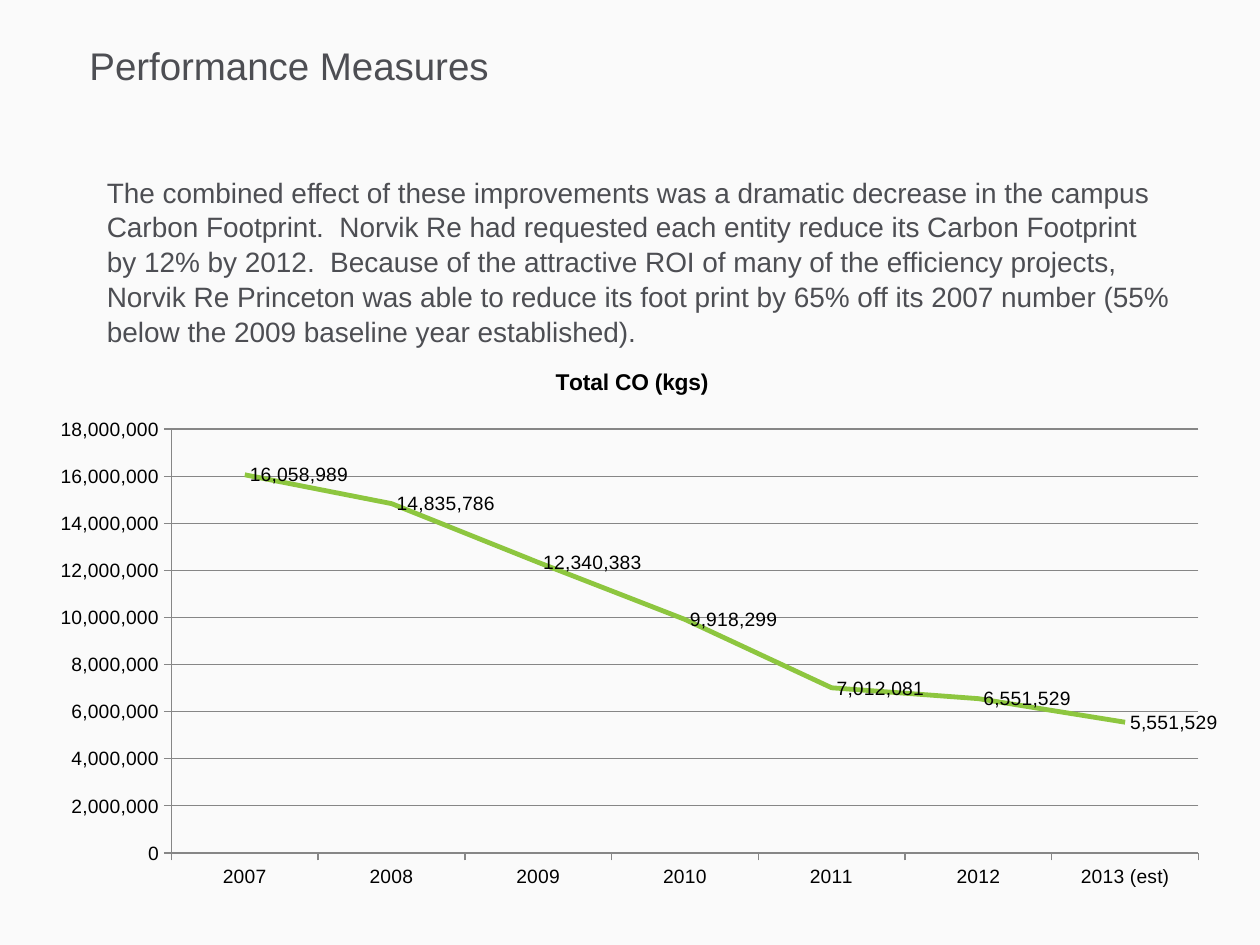
from lxml.etree import SubElement
from pptx import Presentation
from pptx.chart.data import CategoryChartData
from pptx.dml.color import RGBColor
from pptx.enum.chart import XL_CHART_TYPE, XL_LABEL_POSITION, XL_TICK_MARK
from pptx.enum.text import MSO_ANCHOR, MSO_AUTO_SIZE, PP_ALIGN
from pptx.oxml.ns import qn
from pptx.util import Inches, Pt

PAPER = RGBColor(0xFA, 0xFA, 0xFA)
GREY = RGBColor(0x4D, 0x4E, 0x53)
BLACK = RGBColor(0, 0, 0)
GREEN = RGBColor(0x8D, 0xC6, 0x3F)
RULE = RGBColor(0x86, 0x86, 0x86)
FACE = "Arial"
COMMAS = "#,##0"

STORY = (
    "The combined effect of these improvements was a dramatic decrease in the "
    "campus Carbon Footprint.  Norvik Re had requested each entity reduce its "
    "Carbon Footprint by 12% by 2012.  Because of the attractive ROI of many of "
    "the efficiency projects, Norvik Re Princeton was able to reduce its foot "
    "print by 65% off its 2007 number (55% below the 2009 baseline year "
    "established)."
)
CARBON = {
    "2007": 16058989,
    "2008": 14835786,
    "2009": 12340383,
    "2010": 9918299,
    "2011": 7012081,
    "2012": 6551529,
    "2013 (est)": 5551529,
}


class Page:
    """One slide; places are percent of its width and height."""

    def __init__(self, deck):
        self.deck = deck
        self.slide = deck.slides.add_slide(deck.slide_layouts[5])
        fill = self.slide.background.fill
        fill.solid()
        fill.fore_color.rgb = PAPER

    def place(self, left, top, width, height):
        wide, high = self.deck.slide_width, self.deck.slide_height
        return [int(share * side / 100) for share, side in
                zip((left, top, width, height), (wide, high, wide, high))]

    def style(self, font, size, color=BLACK, bold=False):
        font.name, font.size, font.bold = FACE, Pt(size), bold
        font.color.rgb = color

    def letter(self, frame, text, size):
        """Set the frame's text, top left, and return its paragraph."""
        frame.word_wrap = True
        frame.auto_size = MSO_AUTO_SIZE.NONE
        frame.vertical_anchor = MSO_ANCHOR.TOP
        frame.text = text
        para = frame.paragraphs[0]
        para.alignment = PP_ALIGN.LEFT
        self.style(para.font, size, GREY)
        return para

    def title(self, text, box):
        shape = self.slide.shapes.title
        shape.left, shape.top, shape.width, shape.height = self.place(*box)
        frame = shape.text_frame
        frame.margin_left = frame.margin_right = 0
        frame.margin_top = frame.margin_bottom = 0
        self.letter(frame, text, 22)

    def text(self, text, box):
        shape = self.slide.shapes.add_textbox(*self.place(*box))
        self.letter(shape.text_frame, text, 16).line_spacing = 1.04

    def rule(self, line):
        line.color.rgb = RULE
        line.width = Pt(0.75)

    def chart(self, name, values, box, inner):
        data = CategoryChartData(number_format=COMMAS)
        data.categories = list(values)
        data.add_series(name, list(values.values()))
        chart = self.slide.shapes.add_chart(
            XL_CHART_TYPE.LINE, *self.place(*box), data).chart
        self.style(chart.font, 11)
        chart.has_legend = False
        chart.has_title = True
        chart.chart_title.text_frame.text = name
        head = chart.chart_title.text_frame.paragraphs[0]
        self.style(head.font, 13, bold=True)
        for axis in (chart.category_axis, chart.value_axis):
            axis.major_tick_mark = XL_TICK_MARK.OUTSIDE
            axis.minor_tick_mark = XL_TICK_MARK.NONE
            self.rule(axis.format.line)
        axis = chart.value_axis
        axis.minimum_scale, axis.maximum_scale = 0, 18000000
        axis.major_unit = 2000000
        axis.tick_labels.number_format = COMMAS
        axis.tick_labels.number_format_is_linked = False
        axis.has_major_gridlines = True
        self.rule(axis.major_gridlines.format.line)
        plot = chart.plots[0]
        plot.vary_by_categories = False
        series = plot.series[0]
        series.smooth = False
        series.format.line.color.rgb = GREEN
        series.format.line.width = Pt(2.75)
        labels = series.data_labels
        labels.show_value = True
        labels.number_format = COMMAS
        labels.number_format_is_linked = False
        labels.position = XL_LABEL_POSITION.RIGHT
        self.style(labels.font, 11)
        self.fit(chart, inner)

    def fit(self, chart, inner):
        """Fix the plot area to shares of the chart's size."""
        area = chart.element.find(".//" + qn("c:plotArea")) if hasattr(
            chart, "element") else chart._chartSpace.find(".//" + qn("c:plotArea"))
        layout = area.find(qn("c:layout"))
        if layout is None:
            layout = area.makeelement(qn("c:layout"))
            area.insert(0, layout)
        manual = SubElement(layout, qn("c:manualLayout"))
        marks = [("layoutTarget", "inner"), ("xMode", "edge"), ("yMode", "edge")]
        for tag, value in marks + list(zip("xywh", inner)):
            SubElement(manual, qn("c:" + tag)).set("val", str(value))


def main():
    deck = Presentation()
    deck.slide_width, deck.slide_height = Inches(10), Inches(7.5)
    page = Page(deck)
    page.title("Performance Measures", (7.1, 4.4, 74.8, 10.5))
    page.chart("Total CO (kgs)", CARBON, (3.3, 36.67, 93.7, 58.27),
               (0.11, 0.15, 0.87, 0.77))
    page.text(STORY, (7.5, 17.73, 86.7, 19.33))
    deck.save("out.pptx")


if __name__ == "__main__":
    main()
